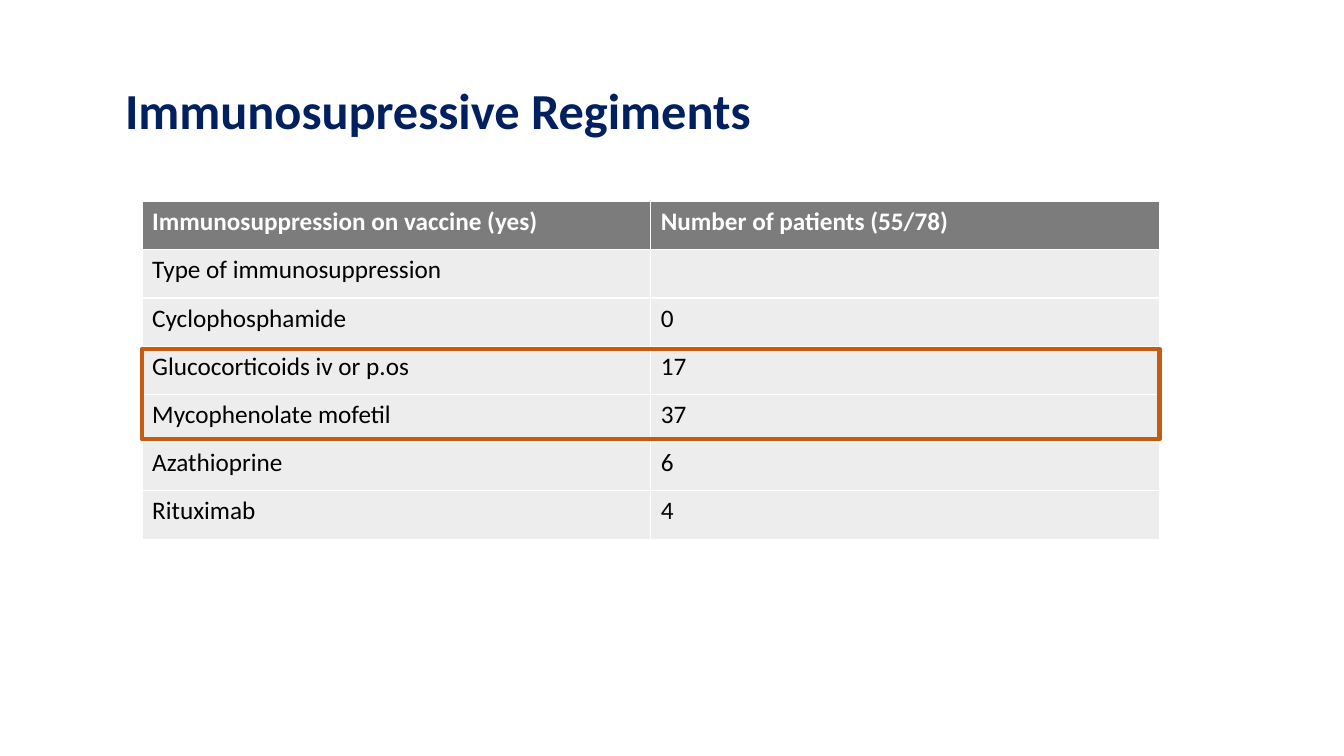
"""Build the slide on immunosuppressive regimens."""
from pptx import Presentation
from pptx.dml.color import RGBColor
from pptx.enum import shapes, text
from pptx.util import Inches, Pt

TITLE = "Immunosupressive Regiments"
ROWS = [
    ("Immunosuppression on vaccine (yes)", "Number of patients (55/78)"),
    ("Type of immunosuppression", ""),
    ("Cyclophosphamide", "0"),
    ("Glucocorticoids iv or p.os", "17"),
    ("Mycophenolate mofetil", "37"),
    ("Azathioprine", "6"),
    ("Rituximab", "4"),
]
FONT = "Calibri"
NAVY = RGBColor(0x00, 0x20, 0x60)
WHITE = RGBColor(0xFF, 0xFF, 0xFF)
BLACK = RGBColor(0x00, 0x00, 0x00)
GRAY = RGBColor(0x7C, 0x7C, 0x7C)
PALE = RGBColor(0xED, 0xED, 0xED)
ORANGE = RGBColor(0xC5, 0x5A, 0x11)
LEFT, TOP, WIDTH, HEIGHT = Inches(1.41), Inches(2), Inches(10.09), Inches(3.35)


def style(p, size, color, bold):
    p.font.name = FONT
    p.font.size = Pt(size)
    p.font.color.rgb = color
    p.font.bold = bold


def add_title(s):
    sp = s.shapes.title
    sp.left, sp.top = Inches(1.14), Inches(0.4)
    sp.width, sp.height = Inches(11.27), Inches(1.45)
    tf = sp.text_frame
    tf.text = TITLE
    tf.vertical_anchor = text.MSO_ANCHOR.MIDDLE
    p = tf.paragraphs[0]
    p.alignment = text.PP_ALIGN.LEFT
    p.line_spacing = 0.9
    style(p, 36, NAVY, True)


def add_regimens(s):
    table = s.shapes.add_table(len(ROWS), len(ROWS[0]), LEFT, TOP, WIDTH, HEIGHT).table
    table.horz_banding = False
    for i, row in enumerate(ROWS):
        header = i == 0
        for j, value in enumerate(row):
            cell = table.cell(i, j)
            cell.text = value
            cell.fill.solid()
            cell.fill.fore_color.rgb = GRAY if header else PALE
            style(cell.text_frame.paragraphs[0], 18, WHITE if header else BLACK, header)


def add_highlight(s):
    sp = s.shapes.add_shape(shapes.MSO_SHAPE.RECTANGLE, LEFT, Inches(3.46), WIDTH, Inches(0.9))
    sp.shadow.inherit = False
    sp.fill.background()
    sp.line.color.rgb = ORANGE
    sp.line.width = Pt(3)


def main():
    prs = Presentation()
    prs.slide_width, prs.slide_height = Inches(13.33), Inches(7.5)
    s = prs.slides.add_slide(prs.slide_layouts[5])
    add_title(s)
    add_regimens(s)
    add_highlight(s)
    prs.save("out.pptx")


if __name__ == "__main__":
    main()
